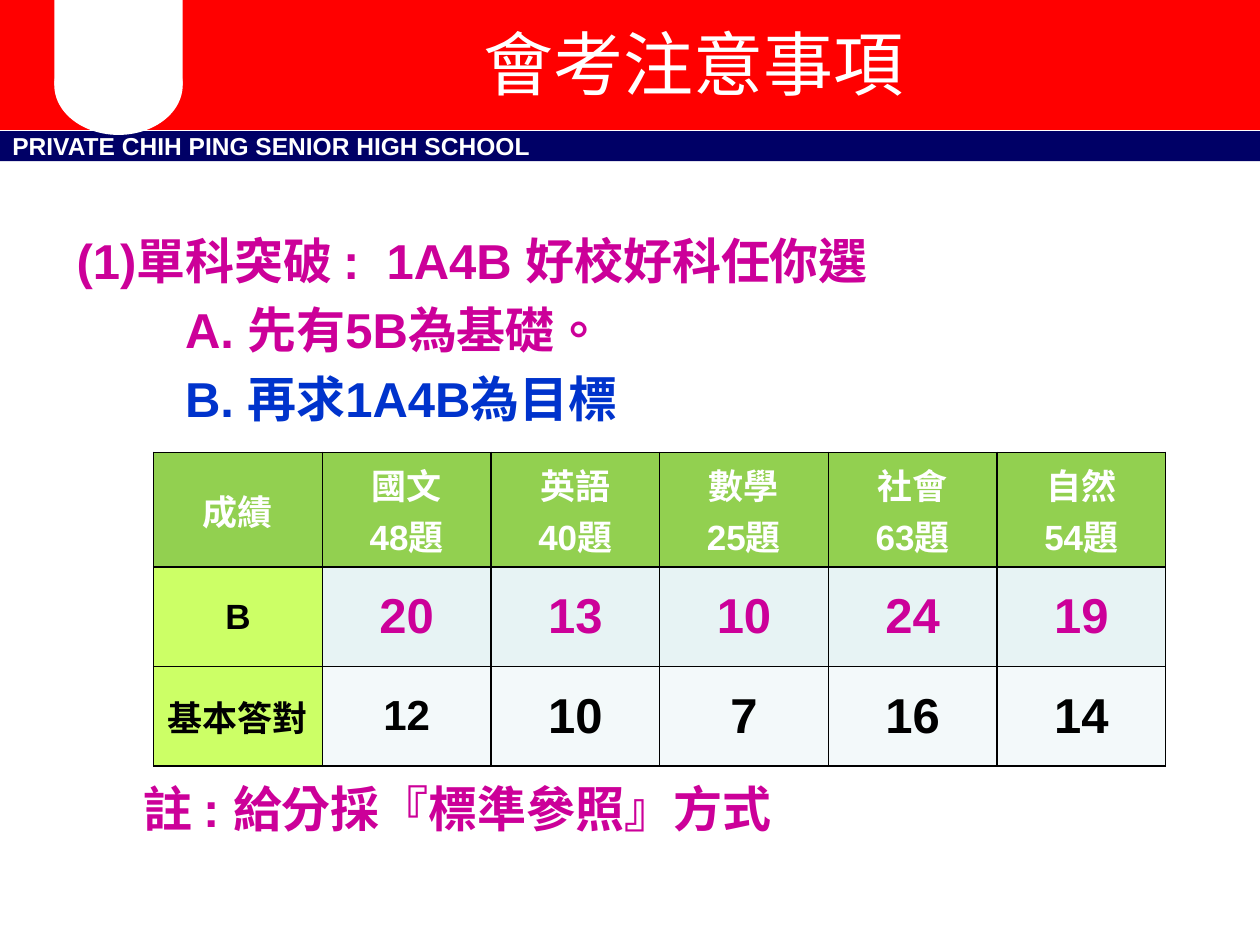
from pptx import Presentation
from pptx.dml.color import RGBColor
from pptx.enum.shapes import MSO_SHAPE as Shape
from pptx.enum.text import MSO_ANCHOR as Anchor, PP_ALIGN as Align
from pptx.oxml import parse_xml
from pptx.oxml.ns import nsdecls
from pptx.util import Pt

WHITE = RGBColor(0xFF, 0xFF, 0xFF)
BLACK = RGBColor(0x00, 0x00, 0x00)
RED = RGBColor(0xFF, 0x00, 0x00)
NAVY = RGBColor(0x00, 0x00, 0x66)
BLUE = RGBColor(0x00, 0x33, 0xCC)
MAGENTA = RGBColor(0xCC, 0x00, 0x99)
GREEN = RGBColor(0x92, 0xD0, 0x50)
LIME = RGBColor(0xCC, 0xFF, 0x66)
PALE = RGBColor(0xE7, 0xF3, 0xF4)
PALER = RGBColor(0xF3, 0xF9, 0xFA)


def write(para, text, size=28, color=WHITE, bold=True, align=Align.LEFT):
    para.alignment = align
    span = para.add_run()
    span.text = text
    span.font.name = "Arial"
    span.font.size = Pt(size)
    span.font.bold = bold
    span.font.color.rgb = color
    span._r.get_or_add_rPr().set("lang", "zh-TW")


def add_border(cell):
    """Draw a thin black line on all four sides of a table cell."""
    properties = cell._tc.get_or_add_tcPr()
    for side in "LRTB":
        properties.append(parse_xml(
            f'<a:ln{side} {nsdecls("a")} w="12700"><a:solidFill>'
            f'<a:srgbClr val="{BLACK}"/></a:solidFill></a:ln{side}>'))


deck = Presentation()
deck.slide_width, deck.slide_height = Pt(720), Pt(540)
page = deck.slides.add_slide(deck.slide_layouts[6])

# Header bands and the white badge
bands = []
for kind, left, top, width, height, color in [
    (Shape.RECTANGLE, 0, 74.9, 720, 17.3, NAVY),
    (Shape.RECTANGLE, 0, 0, 720, 71.3, RED),
    (Shape.RECTANGLE, 31, -2.2, 73.4, 51.1, WHITE),
    (Shape.OVAL, 31, 20.2, 73.4, 56.9, WHITE),
]:
    band = page.shapes.add_shape(kind, Pt(left), Pt(top), Pt(width), Pt(height))
    band.shadow.inherit = False
    band.fill.solid()
    band.fill.fore_color.rgb = color
    band.line.fill.background()
    bands.append(band)
school_band, title_band = bands[:2]
title_band.line.color.rgb = RED
title_band.line.width = Pt(6)
school_band.text_frame.vertical_anchor = Anchor.MIDDLE
write(school_band.text_frame.paragraphs[0],
      "PRIVATE CHIH PING SENIOR HIGH SCHOOL", size=14)

title = page.shapes.add_textbox(Pt(110.2), Pt(0), Pt(572.4), Pt(71.3)).text_frame
title.word_wrap = True
title.vertical_anchor = Anchor.MIDDLE
write(title.paragraphs[0], "會考注意事項", size=40, bold=False, align=Align.CENTER)

# Body text, with room for the table before the last line
body = page.shapes.add_textbox(Pt(36.7), Pt(125.9), Pt(648), Pt(356.4)).text_frame
body.word_wrap = True
body.margin_top = 0
for index, (text, indent, before, color) in enumerate([
    ("(1)單科突破 :  1A4B 好校好科任你選", 0, 0, MAGENTA),
    ("A. 先有5B為基礎。", 62, 0, MAGENTA),
    ("B. 再求1A4B為目標", 62, 0, BLUE),
    ("註 : 給分採『標準參照』方式", 38, 195, MAGENTA),
]):
    para = body.add_paragraph() if index else body.paragraphs[0]
    para._p.get_or_add_pPr().set("marL", str(Pt(indent)))
    para.line_spacing = Pt(39.4)
    para.space_before = Pt(before)
    write(para, text, color=color)

# Score table
rows = [
    ["成績", "國文\n48題", "英語\n40題", "數學\n25題", "社會\n63題", "自然\n54題"],
    ["B", "20", "13", "10", "24", "19"],
    ["基本答對", "12", "10", "7", "16", "14"],
]
# Row height, label fill, value fill, label colour, value colour, value sizes
styles = [
    (65.6, GREEN, GREEN, WHITE, WHITE, [20] * 5),
    (56.8, LIME, PALE, BLACK, MAGENTA, [28] * 5),
    (56.8, LIME, PALER, BLACK, BLACK, [24] + [28] * 4),
]
table = page.shapes.add_table(3, 6, Pt(87.8), Pt(258.5), Pt(578.4), Pt(179.2)).table
for column in table.columns:
    column.width = Pt(96.4)
for row, texts, style in zip(table.rows, rows, styles):
    height, label_fill, value_fill, label_color, value_color, value_sizes = style
    row.height = Pt(height)
    for index, (cell, text, size) in enumerate(zip(row.cells, texts, [20] + value_sizes)):
        add_border(cell)
        cell.fill.solid()
        cell.fill.fore_color.rgb = value_fill if index else label_fill
        cell.vertical_anchor = Anchor.MIDDLE
        for number, line in enumerate(text.split("\n")):
            frame = cell.text_frame
            para = frame.add_paragraph() if number else frame.paragraphs[0]
            write(para, line, size=size, align=Align.CENTER,
                  color=value_color if index else label_color)

deck.save("out.pptx")
